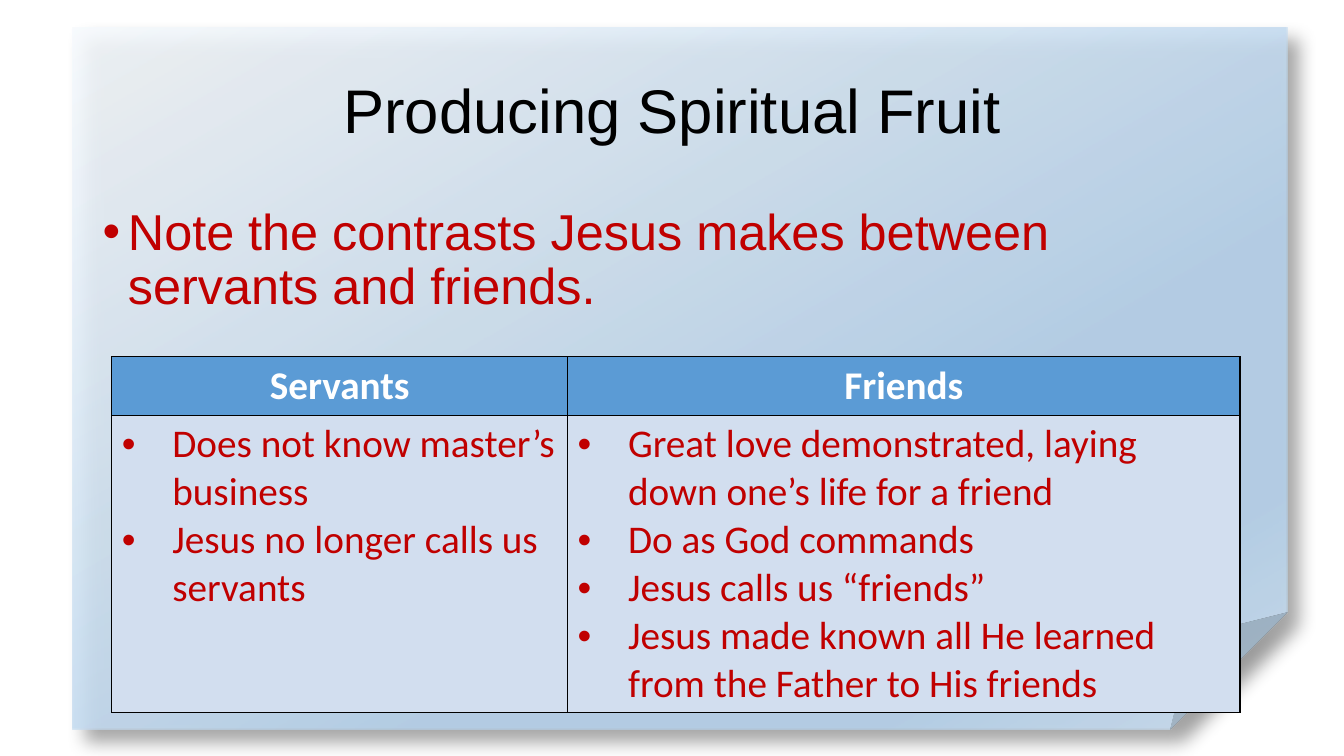
from lxml import etree
from pptx import Presentation
from pptx.dml.color import RGBColor
from pptx.enum.shapes import MSO_SHAPE
from pptx.enum.text import MSO_ANCHOR, PP_ALIGN
from pptx.oxml import parse_xml
from pptx.oxml.ns import qn
from pptx.util import Inches, Pt

FOLD = MSO_SHAPE.FOLDED_CORNER
MIDDLE = MSO_ANCHOR.MIDDLE
CENTER, LEFT = PP_ALIGN.CENTER, PP_ALIGN.LEFT

BLACK = RGBColor(0x00, 0x00, 0x00)
WHITE = RGBColor(0xFF, 0xFF, 0xFF)
RED = RGBColor(0xC0, 0x00, 0x00)
BLUE = RGBColor(0x5B, 0x9B, 0xD5)
PALE = RGBColor(0xD2, 0xDE, 0xEF)
MIST = RGBColor(0xF7, 0xFA, 0xFD)
SKY = RGBColor(0xB5, 0xD2, 0xEC)
HAZE = RGBColor(0xCE, 0xE1, 0xF2)

NS = 'xmlns:a="http://schemas.openxmlformats.org/drawingml/2006/main"'
STOPS = [(0, MIST), (64, SKY), (83, SKY), (100, HAZE)]
TABLE = {
    "Servants": [
        "Does not know master’s business",
        "Jesus no longer calls us servants",
    ],
    "Friends": [
        "Great love demonstrated, laying down one’s life for a friend",
        "Do as God commands",
        "Jesus calls us “friends”",
        "Jesus made known all He learned from the Father to His friends",
    ],
}


def write(frame, lines, size=28, font="Calibri", color=RED, bold=False,
          align=LEFT, hang=0, space=None):
    """Fill a text frame; a hang in inches makes the lines bulleted."""
    frame.word_wrap = True
    for i, line in enumerate(lines):
        para = frame.paragraphs[0] if i == 0 else frame.add_paragraph()
        para.alignment = align
        if space:
            para.line_spacing = space
        if hang:
            props = para._p.get_or_add_pPr()
            props.set("marL", str(Inches(hang)))
            props.set("indent", str(-Inches(hang)))
            etree.SubElement(props, qn("a:buFont")).set("typeface", "Arial")
            etree.SubElement(props, qn("a:buChar")).set("char", "•")
        run = para.add_run()
        run.text = line
        run.font.size = Pt(size)
        run.font.name = font
        run.font.bold = bold
        run.font.color.rgb = color


class Deck:
    def __init__(self):
        self.prs = Presentation()
        self.prs.slide_width = Inches(13.33)
        self.prs.slide_height = Inches(7.5)
        self.slide = self.prs.slides.add_slide(self.prs.slide_layouts[6])

    def sheet(self, *box):
        """Draw the shaded paper with its folded corner."""
        shape = self.slide.shapes.add_shape(FOLD, *map(Inches, box))
        shape.shadow.inherit = False
        shape.line.fill.background()
        stops = "".join(
            f'<a:gs pos="{pos * 1000}"><a:srgbClr val="{color}">'
            '<a:alpha val="87000"/></a:srgbClr></a:gs>'
            for pos, color in STOPS)
        props = shape._element.spPr
        props.find(qn("a:prstGeom")).addnext(parse_xml(
            f'<a:gradFill {NS} rotWithShape="1"><a:gsLst>{stops}</a:gsLst>'
            '<a:lin ang="3600000" scaled="0"/></a:gradFill>'))
        props.find(qn("a:effectLst")).append(parse_xml(
            f'<a:outerShdw {NS} blurRad="{Pt(13)}" dist="{Pt(13)}" '
            'dir="2700000" algn="tl" rotWithShape="0">'
            f'<a:srgbClr val="{BLACK}"><a:alpha val="40000"/></a:srgbClr>'
            '</a:outerShdw>'))

    def text(self, box, line, anchor=None, **style):
        frame = self.slide.shapes.add_textbox(*map(Inches, box)).text_frame
        frame.vertical_anchor = anchor
        write(frame, [line], font="Arial", space=0.9, **style)

    def cell(self, cell, fill, lines, **style):
        props = cell._tc.get_or_add_tcPr()
        for side in "LRTB":
            props.append(parse_xml(
                f'<a:ln{side} {NS} w="{Pt(1)}"><a:solidFill>'
                f'<a:srgbClr val="{BLACK}"/></a:solidFill></a:ln{side}>'))
        cell.fill.solid()
        cell.fill.fore_color.rgb = fill
        write(cell.text_frame, lines, **style)

    def table(self, box, data, widths, heights):
        grid = self.slide.shapes.add_table(
            len(heights), len(widths), *map(Inches, box)).table
        for row, high in zip(grid.rows, heights):
            row.height = Inches(high)
        for i, (head, items) in enumerate(data.items()):
            grid.columns[i].width = Inches(widths[i])
            self.cell(grid.cell(0, i), BLUE, [head], color=WHITE,
                      bold=True, align=CENTER)
            self.cell(grid.cell(1, i), PALE, items, hang=0.5)


def main():
    deck = Deck()
    deck.sheet(0.72, 0.27, 12.05, 6.97)
    deck.text((0.92, 0.4, 11.5, 1.45), "Producing Spiritual Fruit",
              anchor=MIDDLE, size=44, color=BLACK, align=CENTER)
    deck.text((0.92, 2, 11.5, 1.3),
              "Note the contrasts Jesus makes between servants and friends.",
              size=36, hang=0.25)
    deck.table((1.11, 3.54, 11.19, 3.53), TABLE, (4.52, 6.67), (0.58, 2.95))
    deck.prs.save("out.pptx")


if __name__ == "__main__":
    main()
